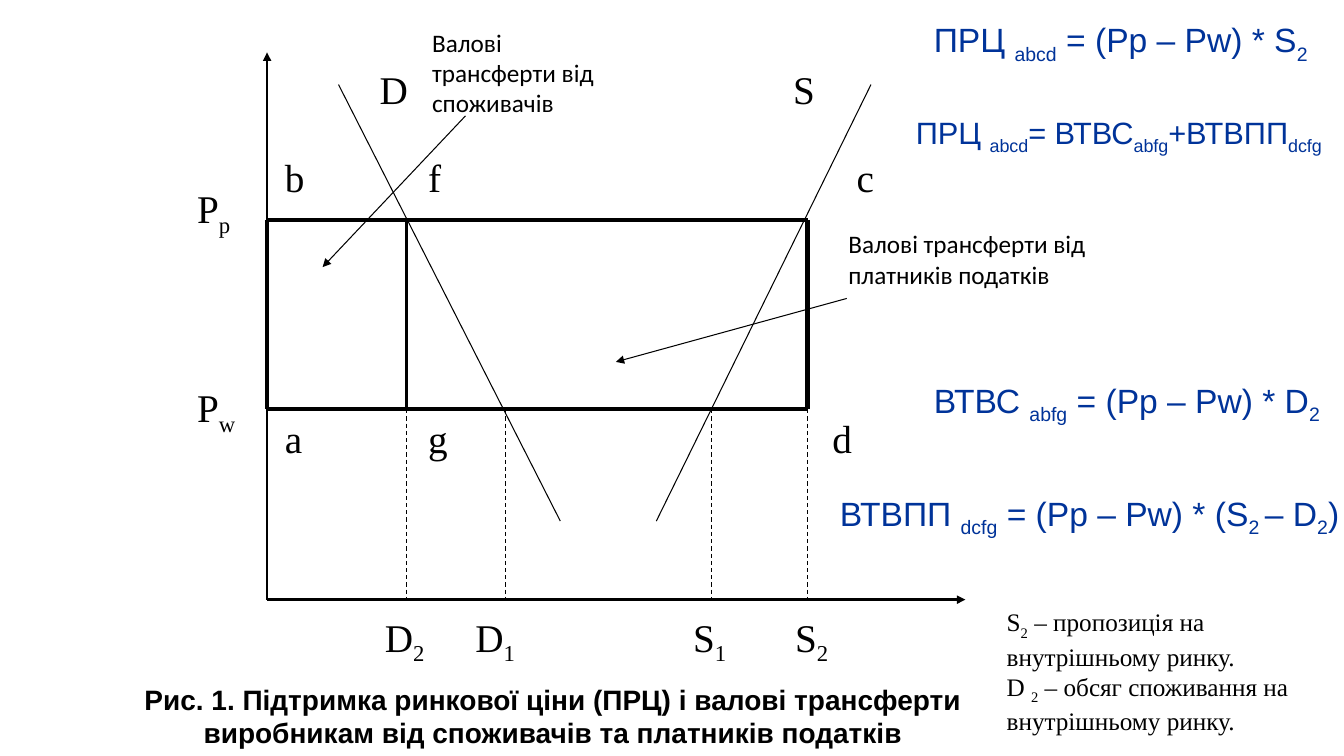
from collections import namedtuple

from lxml import etree
from pptx import Presentation
from pptx.dml.color import RGBColor
from pptx.enum.dml import MSO_LINE
from pptx.enum.shapes import MSO_CONNECTOR
from pptx.enum.text import MSO_AUTO_SIZE, PP_ALIGN
from pptx.oxml.ns import qn
from pptx.util import Cm, Pt

COLORS = {"ink": "000000", "formula": "003399"}
Box = namedtuple("Box", "left top width height")


def add_text(page, box, lines, size, font, color="ink", bold=False,
             align=PP_ALIGN.LEFT, wrap=True):
    """Add a text box; every second part between bars is a subscript."""
    shape = page.shapes.add_textbox(*(Cm(length) for length in box))
    frame = shape.text_frame
    frame.word_wrap = wrap
    frame.auto_size = MSO_AUTO_SIZE.SHAPE_TO_FIT_TEXT
    for index, line in enumerate(lines):
        para = frame.paragraphs[0] if index == 0 else frame.add_paragraph()
        para.alignment = align
        for position, part in enumerate(line.split("|")):
            if not part:
                continue
            span = para.add_run()
            span.text = part
            span.font.size = Pt(size)
            span.font.name = font
            span.font.bold = bold
            span.font.color.rgb = RGBColor.from_string(COLORS[color])
            if position % 2:
                span.font._element.set("baseline", "-25000")


def add_line(page, box, start, end, width=0.75, dashed=False, arrow=False):
    """Draw a straight line between two points measured from the box corner."""
    line = page.shapes.add_connector(
        MSO_CONNECTOR.STRAIGHT,
        Cm(box.left + start[0]), Cm(box.top + start[1]),
        Cm(box.left + end[0]), Cm(box.top + end[1]))
    line.line.color.rgb = RGBColor.from_string(COLORS["ink"])
    line.line.width = Pt(width)
    if dashed:
        line.line.dash_style = MSO_LINE.DASH
    if arrow:
        outline = line.line._get_or_add_ln()
        etree.SubElement(outline, qn("a:tailEnd"), type="triangle")
    etree.SubElement(line._element.spPr, qn("a:effectLst"))


def draw_market(page, box):
    """Draw axes, curves, price levels and transfer areas."""
    demand_high, demand_low, supply_low, supply_high = 3.51, 6, 11.2, 13.62
    support_price, world_price = 4.22, 8.99
    origin = (0, box.height)

    add_line(page, box, origin, (0, 0), 2, arrow=True)
    add_line(page, box, origin, (box.width, box.height), 2, arrow=True)
    for price in (support_price, world_price):
        add_line(page, box, (0, price), (supply_high, price), 3)
    for x, width in ((0, 3), (demand_high, 2), (supply_high, 3)):
        add_line(page, box, (x, support_price), (x, world_price), width)
    for x in (demand_high, demand_low, supply_low, supply_high):
        add_line(page, box, (x, world_price), (x, box.height), dashed=True)
    add_line(page, box, (1.8, 0.81), (7.39, 11.81))
    add_line(page, box, (15.22, 0.81), (9.81, 11.81))

    upper, lower, quantities = 2.41, world_price, box.height + 0.21
    labels = (
        ("D", 2.59, 0.2), ("S", 13.01, 0.2),
        ("b", 0.2, upper), ("f", 3.81, upper), ("c", 14.61, upper),
        ("a", 0.2, lower), ("g", 3.81, lower), ("d", 14, lower),
        ("P|p", -2.01, 3.2), ("P|w", -2.01, 8.21),
        ("D|2", 2.72, quantities), ("D|1", 5, quantities),
        ("S|1", 10.49, quantities), ("S|2", 13.06, quantities),
    )
    for label, x, y in labels:
        width = 1.9 if "|" in label else 1.4 if label.isupper() else 1
        add_text(page, Box(box.left + x, box.top + y, width, 1.45),
                 [label], 28, "Times New Roman")


def draw_callouts(page, box):
    """Name the two transfer areas and point an arrow at each."""
    callouts = (
        ("Валові трансферти від споживачів",
         Box(3.91, -0.76, 4.6, 2.57), (5, 1.6), (1.4, 5.41)),
        ("Валові трансферти від платників податків",
         Box(14.4, 4.32, 8.59, 1.78), (14.61, 6.2), (8.79, 7.8)),
    )
    for text, place, start, end in callouts:
        label_box = place._replace(left=box.left + place.left,
                                   top=box.top + place.top)
        add_text(page, label_box, [text], 18, "Calibri")
        add_line(page, box, start, end, arrow=True)


def draw_formulas(page, box):
    """Place the formulas down the right side of the page."""
    formulas = (
        ("ПРЦ |abcd| = (Pp – Pw) * S|2", 2.41, 0, 10.21, 24),
        ("ПРЦ |abcd|= ВТВС|abfg|+ВТВПП|dcfg", 1.8, 2.38, 11.33, 22),
        ("ВТВС |abfg| = (Pp – Pw) * D|2", 2.41, 9.09, 10.52, 24),
        ("ВТВПП |dcfg| = (Pp – Pw) * (S|2 |– D|2|)", 0, 11.93, 13.46, 24),
    )
    for text, x, y, width, size in formulas:
        add_text(page, Box(box.left + x, box.top + y, width, 1.27), [text],
                 size, "Arial", "formula", align=PP_ALIGN.CENTER, wrap=False)


def draw_legend(page, box):
    """Explain the quantity symbols."""
    add_text(page, box, ["S|2| – пропозиція на внутрішньому ринку.",
                         "D |2| – обсяг споживання на внутрішньому ринку."],
             18, "Times New Roman")


def draw_caption(page, box):
    """Write the figure caption."""
    add_text(page, box,
             ["Рис. 1. Підтримка ринкової ціни (ПРЦ) і валові трансферти "
              "виробникам від споживачів та платників податків"],
             20, "Arial", bold=True, align=PP_ALIGN.CENTER)


def main():
    """Build the page and save the deck."""
    deck = Presentation()
    deck.slide_width, deck.slide_height = Cm(33.87), Cm(19.05)
    page = deck.slides.add_slide(deck.slide_layouts[6])
    market = Box(6.73, 1.32, 17.6, 13.79)
    draw_market(page, market)
    draw_callouts(page, market)
    draw_formulas(page, Box(20.73, 0.36, 13.46, 13.2))
    draw_legend(page, Box(25.12, 15.16, 8.53, 3.33))
    draw_caption(page, Box(1.73, 17.07, 24.41, 1.96))
    deck.save("out.pptx")


if __name__ == "__main__":
    main()
